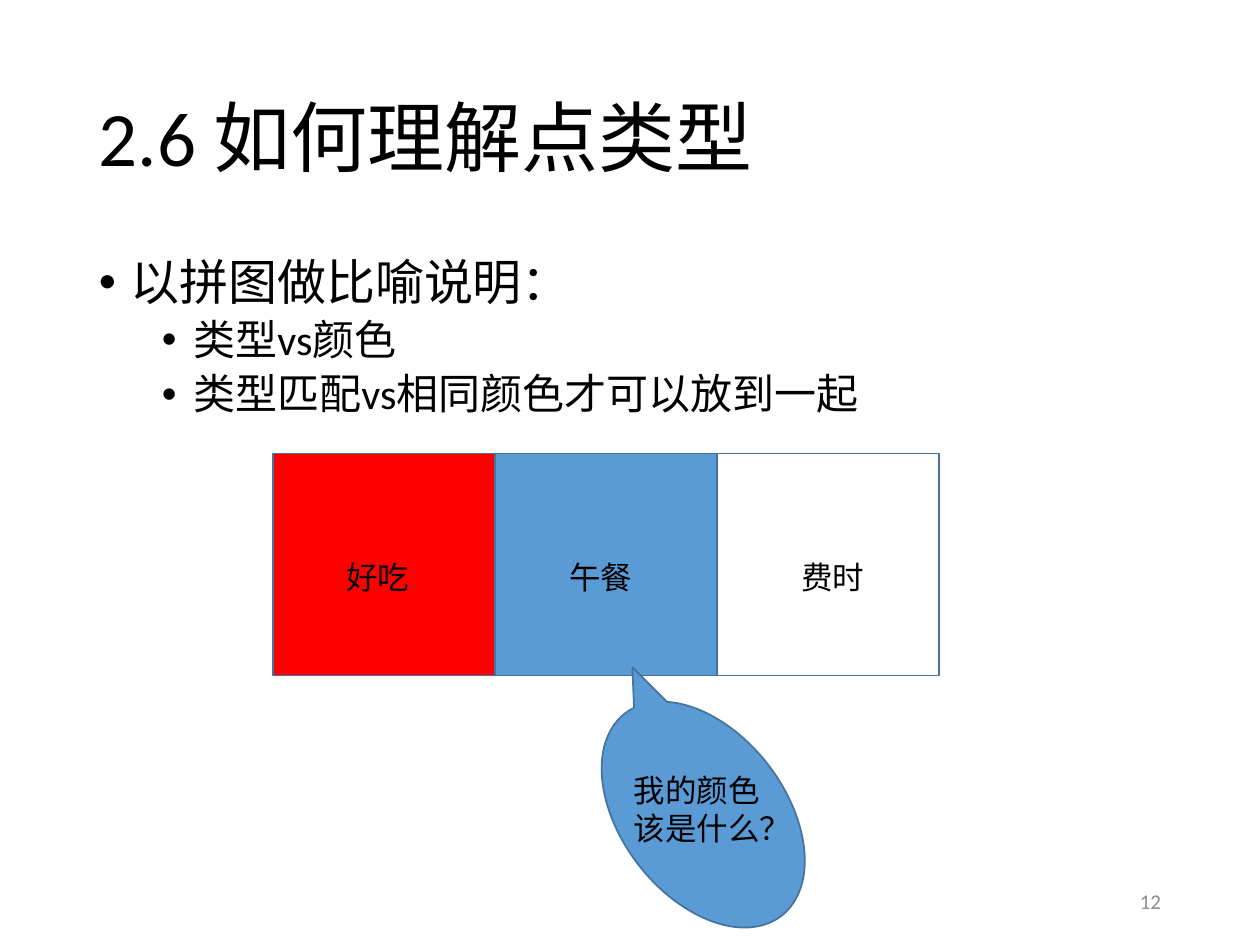
from pptx import Presentation
from pptx.dml.color import RGBColor
from pptx.enum.shapes import MSO_SHAPE
from pptx.enum.text import MSO_ANCHOR, PP_ALIGN
from pptx.oxml.ns import qn
from pptx.util import Pt
from lxml.etree import SubElement


def paint(target, color):
    target.rgb = RGBColor.from_string(color)


def assign(target, values):
    for name, value in values.items():
        setattr(target, name, value)


def fill_line(par, text, size, color="000000", **form):
    assign(par, form)
    run = par.add_run()
    run.text = text
    assign(run.font, {"name": "Calibri", "size": Pt(size)})
    paint(run.font.color, color)


def add_box(slide, box, anchor=MSO_ANCHOR.TOP):
    frame = slide.shapes.add_textbox(*map(Pt, box)).text_frame
    assign(frame, {"word_wrap": True, "vertical_anchor": anchor})
    return frame


def add_label(slide, box, text, size=18, color="000000",
              anchor=MSO_ANCHOR.TOP, **form):
    frame = add_box(slide, box, anchor)
    fill_line(frame.paragraphs[0], text, size, color, **form)


def add_block(slide, kind, box, color):
    shape = slide.shapes.add_shape(kind, *map(Pt, box))
    shape.shadow.inherit = False
    shape.fill.solid()
    paint(shape.fill.fore_color, color)
    shape.line.width = Pt(1)
    paint(shape.line.color, "43739E")
    return shape


def add_points(slide, box, points):
    frame = add_box(slide, box)
    for rank, (text, level) in enumerate(points):
        par = frame.add_paragraph() if rank else frame.paragraphs[0]
        props = par._p.get_or_add_pPr()
        props.set("marL", str(Pt(18 + 36 * level)))
        props.set("indent", str(Pt(-18)))
        SubElement(props, qn("a:buFont"), typeface="Arial")
        SubElement(props, qn("a:buChar"), char="•")
        fill_line(par, text, 28 - 4 * level, level=level,
                  line_spacing=0.9, space_before=Pt(5 if rank else 0))


def add_puzzle(slide, box, tiles):
    left, top, width, height = box
    side = width / len(tiles)
    for rank, (text, color, inset) in enumerate(tiles):
        start = left + rank * side
        add_block(slide, MSO_SHAPE.RECTANGLE, (start, top, side, height), color)
        add_label(slide, (start + inset, top + 56.2, 51, 29), text)


def add_bubble(slide, box, text):
    left, top, width, height = box
    shape = add_block(slide, MSO_SHAPE.OVAL_CALLOUT, box, "5B9BD5")
    shape.rotation = 142.3
    add_label(slide, (left, top + 44.6, width + 5, 51), text)


def build():
    deck = Presentation()
    assign(deck, {"slide_width": Pt(720), "slide_height": Pt(540)})
    slide = deck.slides.add_slide(deck.slide_layouts[6])
    add_label(slide, (49.5, 28.75, 621, 104.4), "2.6 如何理解点类型", 44,
              anchor=MSO_ANCHOR.MIDDLE, line_spacing=0.9)
    add_points(slide, (49.5, 143.75, 621, 342.6), [
        ("以拼图做比喻说明：", 0),
        ("类型vs颜色", 1),
        ("类型匹配vs相同颜色才可以放到一起", 1),
    ])
    add_puzzle(slide, (156.2, 259.2, 380.4, 126.8), [
        ("好吃", "FF0000", 34.5),
        ("午餐", "5B9BD5", 35.2),
        ("费时", "FFFFFF", 41),
    ])
    add_bubble(slide, (355, 392.4, 93.6, 146.2), "我的颜色该是什么？")
    add_label(slide, (508.5, 500.5, 162, 28.75), "12", 12, "8C8C8C",
              MSO_ANCHOR.MIDDLE, alignment=PP_ALIGN.RIGHT)
    deck.save("out.pptx")


if __name__ == "__main__":
    build()
